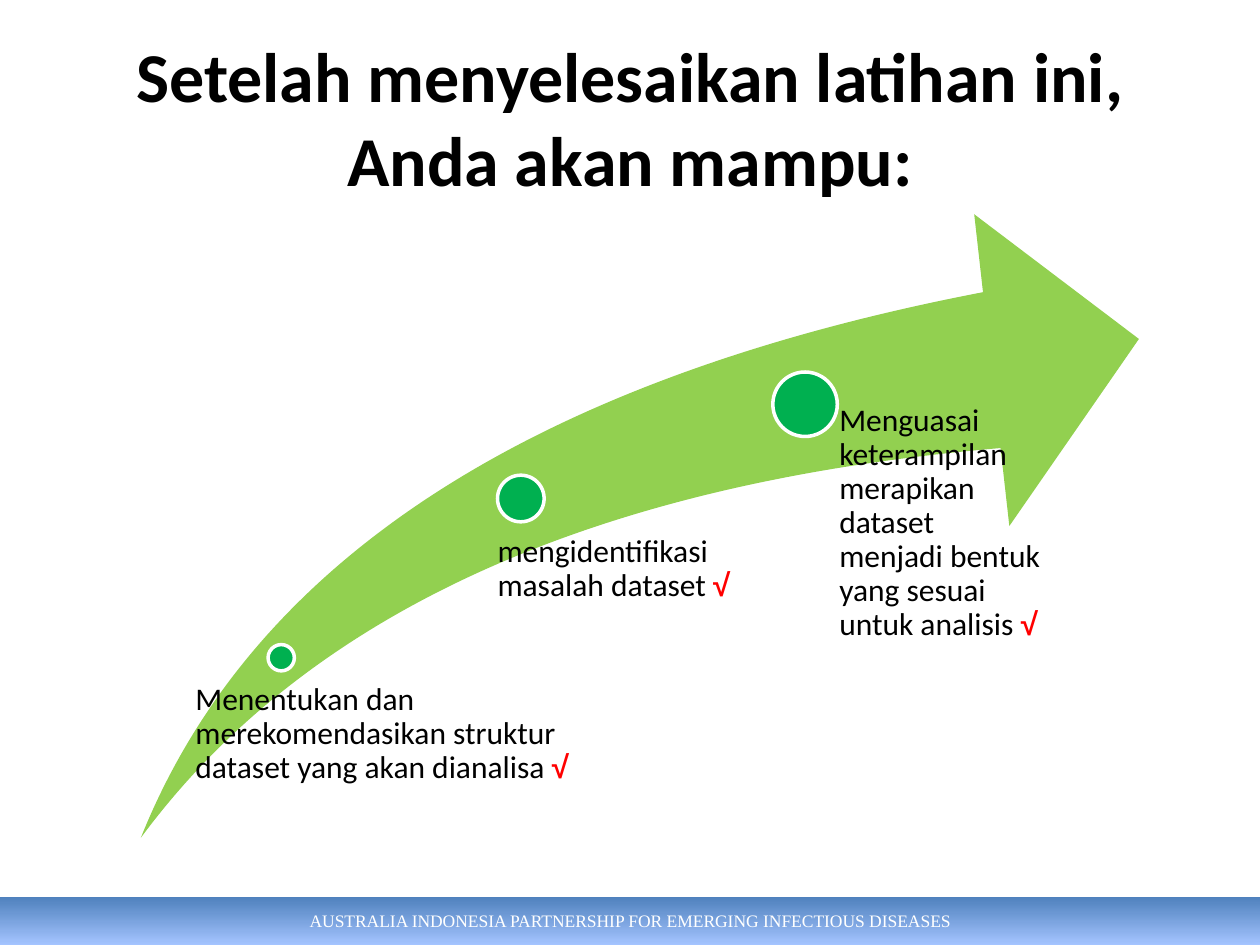
from dataclasses import dataclass

from pptx import Presentation
from pptx.dml.color import RGBColor as RGB
from pptx.enum.shapes import MSO_SHAPE as SHAPE
from pptx.enum.text import MSO_ANCHOR as ANCHOR, PP_ALIGN as ALIGN
from pptx.util import Cm, Pt


@dataclass(frozen=True)
class Theme:
    ink: RGB = RGB(0, 0, 0)
    paper: RGB = RGB(255, 255, 255)
    arrow: RGB = RGB(0x92, 0xD0, 0x50)
    dot: RGB = RGB(0x00, 0xB0, 0x50)
    check: RGB = RGB(255, 0, 0)
    band_top: RGB = RGB(0x4F, 0x81, 0xBD)
    band_bottom: RGB = RGB(0xA4, 0xC4, 0xFF)
    font: str = "Calibri"
    check_font: str = "Arial"
    band_font: str = "Times New Roman"
    title_size: Pt = Pt(40)
    goal_size: Pt = Pt(18)
    band_size: Pt = Pt(10)


class SlideBuilder:
    def __init__(self, slide, theme):
        self.slide = slide
        self.theme = theme

    def shape(self, kind, left, top, width, height, fill=None):
        shape = self.slide.shapes.add_shape(
            kind, Cm(left), Cm(top), Cm(width), Cm(height))
        shape.shadow.inherit = False
        shape.line.fill.background()
        if fill is not None:
            shape.fill.solid()
            shape.fill.fore_color.rgb = fill
        return shape

    def text_box(self, left, top, width, height):
        frame = self.slide.shapes.add_textbox(
            Cm(left), Cm(top), Cm(width), Cm(height)).text_frame
        frame.word_wrap = True
        return frame

    def centred(self, frame, text, font, size, color, bold=False):
        frame.vertical_anchor = ANCHOR.MIDDLE
        paragraph = frame.paragraphs[0]
        paragraph.text = text
        paragraph.alignment = ALIGN.CENTER
        self.style(paragraph.font, font, size, color, bold)

    def style(self, target, font, size, color, bold=False):
        target.name, target.size, target.bold = font, size, bold
        target.color.rgb = color

    def footer(self, text):
        t = self.theme
        band = self.shape(SHAPE.RECTANGLE, 0, 18.08, 25.4, 0.97)
        band.fill.gradient()
        band.fill.gradient_angle = 270
        for stop, color in zip(band.fill.gradient_stops, (t.band_top, t.band_bottom)):
            stop.color.rgb = color
        self.centred(band.text_frame, text, t.band_font, t.band_size, t.paper)

    def title(self, text):
        t = self.theme
        self.centred(self.text_box(1.27, 0.76, 22.86, 3.18), text,
                     t.font, t.title_size, t.ink, bold=True)

    def swoosh(self, left, top, width, height):
        arrow = self.shape(SHAPE.SWOOSH_ARROW, left, top, width, height, self.theme.arrow)
        arrow.adjustments[0] = 0.25
        arrow.adjustments[1] = 0.25

    def dot(self, center_x, center_y, size):
        dot = self.shape(SHAPE.OVAL, center_x - size / 2, center_y - size / 2,
                         size, size, self.theme.dot)
        dot.line.color.rgb = self.theme.paper
        dot.line.width = Pt(2)

    def goal(self, text, box, inset):
        t = self.theme
        frame = self.text_box(*box)
        frame.margin_left = Cm(inset)
        frame.margin_top = frame.margin_right = frame.margin_bottom = 0
        paragraph = frame.paragraphs[0]
        paragraph.line_spacing = 0.9
        wording, check = paragraph.add_run(), paragraph.add_run()
        wording.text, check.text = text + " ", "√"
        self.style(wording.font, t.font, t.goal_size, t.ink)
        self.style(check.font, t.check_font, t.goal_size, t.check, bold=True)


# Wording, dot (centre x, centre y, size), text box, left inset; in cm
GOALS = [
    ("Menentukan dan merekomendasikan struktur dataset yang akan dianalisa",
     (5.67, 13.26, 0.53), (3.66, 13.77, 8.84, 1.17), 0.28),
    ("mengidentifikasi masalah dataset",
     (10.5, 10.05, 0.94), (9.53, 10.8, 6.76, 5.36), 0.5),
    ("Menguasai keterampilan merapikan dataset menjadi bentuk yang sesuai untuk analisis",
     (16.23, 8.15, 1.3), (16.23, 8.15, 4.83, 8.74), 0.69),
]


def main():
    deck = Presentation()
    deck.slide_width, deck.slide_height = Cm(25.4), Cm(19.05)
    builder = SlideBuilder(deck.slides.add_slide(deck.slide_layouts[6]), Theme())

    # Footer band and title
    builder.footer("AUSTRALIA INDONESIA PARTNERSHIP FOR EMERGING INFECTIOUS DISEASES")
    builder.title("Setelah menyelesaikan latihan ini, Anda akan mampu:")

    # Rising arrow with the three goals
    builder.swoosh(2.84, 4.32, 20.12, 12.57)
    for text, dot, box, inset in GOALS:
        builder.dot(*dot)
        builder.goal(text, box, inset)

    deck.save("out.pptx")


if __name__ == "__main__":
    main()
